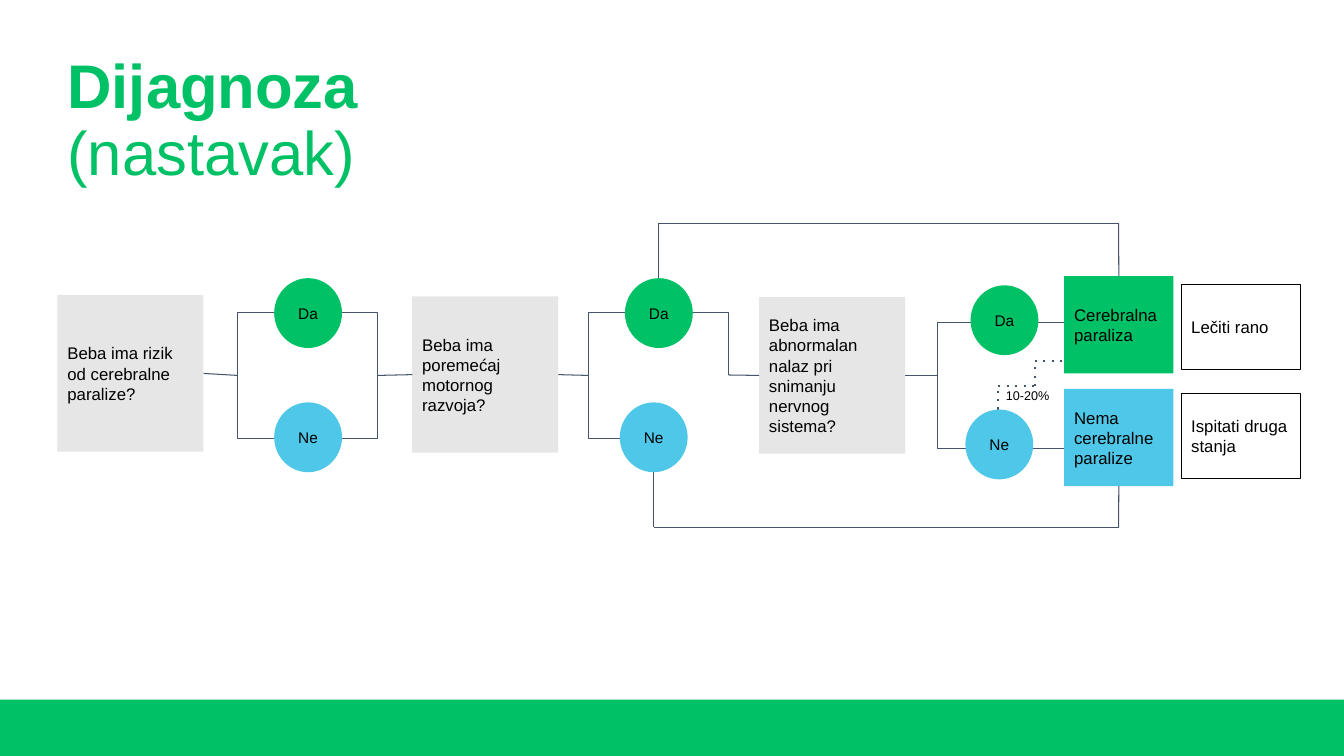
from itertools import pairwise

from lxml import etree
from pptx import Presentation
from pptx.dml.color import RGBColor
from pptx.enum.shapes import MSO_CONNECTOR, MSO_SHAPE
from pptx.enum.text import MSO_ANCHOR, PP_ALIGN
from pptx.oxml.ns import qn
from pptx.util import Cm, Pt

RECTANGLE, OVAL = MSO_SHAPE.RECTANGLE, MSO_SHAPE.OVAL
STRAIGHT = MSO_CONNECTOR.STRAIGHT
LEFT, CENTER = PP_ALIGN.LEFT, PP_ALIGN.CENTER
TOP, MIDDLE = MSO_ANCHOR.TOP, MSO_ANCHOR.MIDDLE
SIDE_TOP, SIDE_LEFT, SIDE_BOTTOM, SIDE_RIGHT = range(4)

GREEN, BLUE, GRAY = "00C165", "4FC7E8", "E7E6E6"
WHITE, BLACK, SLATE = "FFFFFF", "000000", "44546A"
CIRCLE_WIDTH, CIRCLE_HEIGHT = 1.71, 1.76
ANSWER_STEP = 3.13


def color(hex_text):
    return RGBColor.from_string(hex_text)


def set_line(line, hex_text, width=0.75):
    line.color.rgb = color(hex_text)
    line.width = Pt(width)


def write(box, spans, size, ink=BLACK, align=LEFT, anchor=MIDDLE, inset=0.25):
    """Fill a box with one paragraph of (text, bold) spans."""
    frame = box.text_frame
    frame.word_wrap = True
    frame.vertical_anchor = anchor
    frame.margin_left = frame.margin_right = Cm(0.25)
    frame.margin_top = frame.margin_bottom = Cm(inset)
    para = frame.paragraphs[0]
    para.alignment = align
    for text, bold in spans:
        span = para.add_run()
        span.text = text
        span.font.name = "Arial"
        span.font.size = Pt(size)
        span.font.bold = bold
        span.font.color.rgb = color(ink)
    return para


def add_box(page, place, fill=None, outline=None, text=None, kind=RECTANGLE,
            size=12, align=LEFT):
    box = page.shapes.add_shape(kind, *map(Cm, place))
    box.shadow.inherit = False
    if fill:
        box.fill.solid()
        box.fill.fore_color.rgb = color(fill)
    else:
        box.fill.background()
    if outline:
        set_line(box.line, outline)
    else:
        box.line.fill.background()
    if text:
        write(box, [(text, False)], size, align=align)
    return box


def add_answers(page, left, top, shift=0):
    """Add a Da circle and, below it, a Ne circle moved sideways by shift."""
    for row, (text, fill) in enumerate([("Da", GREEN), ("Ne", BLUE)]):
        place = (left + row * shift, top + row * ANSWER_STEP,
                 CIRCLE_WIDTH, CIRCLE_HEIGHT)
        add_box(page, place, fill, text=text, kind=OVAL, size=11, align=CENTER)


def add_bracket(page, points):
    """Draw an open outline through the points."""
    corners = [(Cm(x), Cm(y)) for x, y in points]
    builder = page.shapes.build_freeform(*corners[0])
    builder.add_line_segments(corners[1:], close=False)
    bracket = builder.convert_to_shape()
    bracket.shadow.inherit = False
    bracket.fill.background()
    set_line(bracket.line, SLATE)


def add_route(page, points, begin=None, end=None, dotted=False):
    """Draw straight connectors through the points; begin and end are (box, side)."""
    links = []
    for start, stop in pairwise(points):
        link = page.shapes.add_connector(STRAIGHT, *map(Cm, start + stop))
        set_line(link.line, SLATE, 1.5 if dotted else 0.75)
        if dotted:
            line = link.line.color and link.line._get_or_add_ln()
            etree.SubElement(line, qn("a:prstDash")).set("val", "dot")
        etree.SubElement(link._element.spPr, qn("a:effectLst"))
        links.append(link)
    if begin:
        links[0].begin_connect(*begin)
    if end:
        links[-1].end_connect(*end)


def add_title(page):
    box = page.shapes.add_textbox(Cm(1.45), Cm(1.27), Cm(13.89), Cm(1.98))
    spans = [("Dijagnoza ", True), ("(nastavak)", False)]
    para = write(box, spans, 44, GREEN, anchor=TOP, inset=0.13)
    para.line_spacing = 0.9


def add_questions(page):
    questions = [
        (1.45, 7.44, "Beba ima rizik od cerebralne paralize?"),
        (10.39, 7.47, "Beba ima poremećaj motornog razvoja?"),
        (19.13, 7.49, "Beba ima abnormalan nalaz pri snimanju nervnog sistema?"),
    ]
    return [add_box(page, (left, top, 3.68, 3.94), GRAY, text=text)
            for left, top, text in questions]


def add_outcomes(page):
    rows = [
        (6.96, GREEN, "Cerebralna paraliza", 7.17, "Lečiti rano"),
        (9.8, BLUE, "Nema cerebralne paralize", 9.91, "Ispitati druga stanja"),
    ]
    outcomes = []
    for top, fill, outcome, action_top, action in rows:
        outcomes.append(add_box(page, (26.82, top, 2.75, 2.45), fill, text=outcome))
        add_box(page, (29.77, action_top, 3.01, 2.15), WHITE, BLACK, action)
    return outcomes


def main():
    deck = Presentation()
    deck.slide_width, deck.slide_height = Cm(33.87), Cm(19.05)
    page = deck.slides.add_slide(deck.slide_layouts[6])
    add_box(page, (0, 17.63, 33.87, 1.42), GREEN)
    add_title(page)

    risk_frame = add_box(page, (5.99, 7.87, 3.53, 3.18), outline=SLATE)
    add_bracket(page, [(16, 11.05), (14.83, 11.05), (14.83, 7.87),
                       (18.36, 7.87), (18.36, 9.45)])
    add_bracket(page, [(26.82, 11.3), (23.62, 11.3), (23.62, 8.13), (26.82, 8.13)])

    risk, motor, imaging = add_questions(page)
    palsy, no_palsy = add_outcomes(page)

    add_route(page, [(5.13, 9.41), (5.99, 9.46)],
              (risk, SIDE_RIGHT), (risk_frame, SIDE_LEFT))
    add_route(page, [(9.52, 9.46), (10.39, 9.44)],
              (risk_frame, SIDE_RIGHT), (motor, SIDE_LEFT))
    add_route(page, [(14.07, 9.44), (14.83, 9.46)], begin=(motor, SIDE_RIGHT))
    add_route(page, [(18.36, 9.45), (19.13, 9.46)], end=(imaging, SIDE_LEFT))
    add_route(page, [(22.81, 9.46), (23.62, 9.46)], begin=(imaging, SIDE_RIGHT))
    add_route(page, [(16.6, 7.01), (16.6, 5.63), (28.19, 5.63), (28.19, 6.96)],
              end=(palsy, SIDE_TOP))
    add_route(page, [(16.47, 11.9), (16.47, 13.29), (28.19, 13.29), (28.19, 12.25)],
              end=(no_palsy, SIDE_BOTTOM))
    add_route(page, [(25.16, 10.32), (25.16, 9.73), (26.08, 9.73),
                     (26.08, 9.1), (26.82, 9.1)], dotted=True)

    add_answers(page, 6.91, 7.01)
    add_answers(page, 15.75, 7.01, -0.13)
    add_answers(page, 24.46, 7.19, -0.13)

    share = page.shapes.add_textbox(Cm(25.1), Cm(9.68), Cm(2.31), Cm(0.58))
    write(share, [("10-20%", False)], 9)
    deck.save("out.pptx")


if __name__ == "__main__":
    main()
